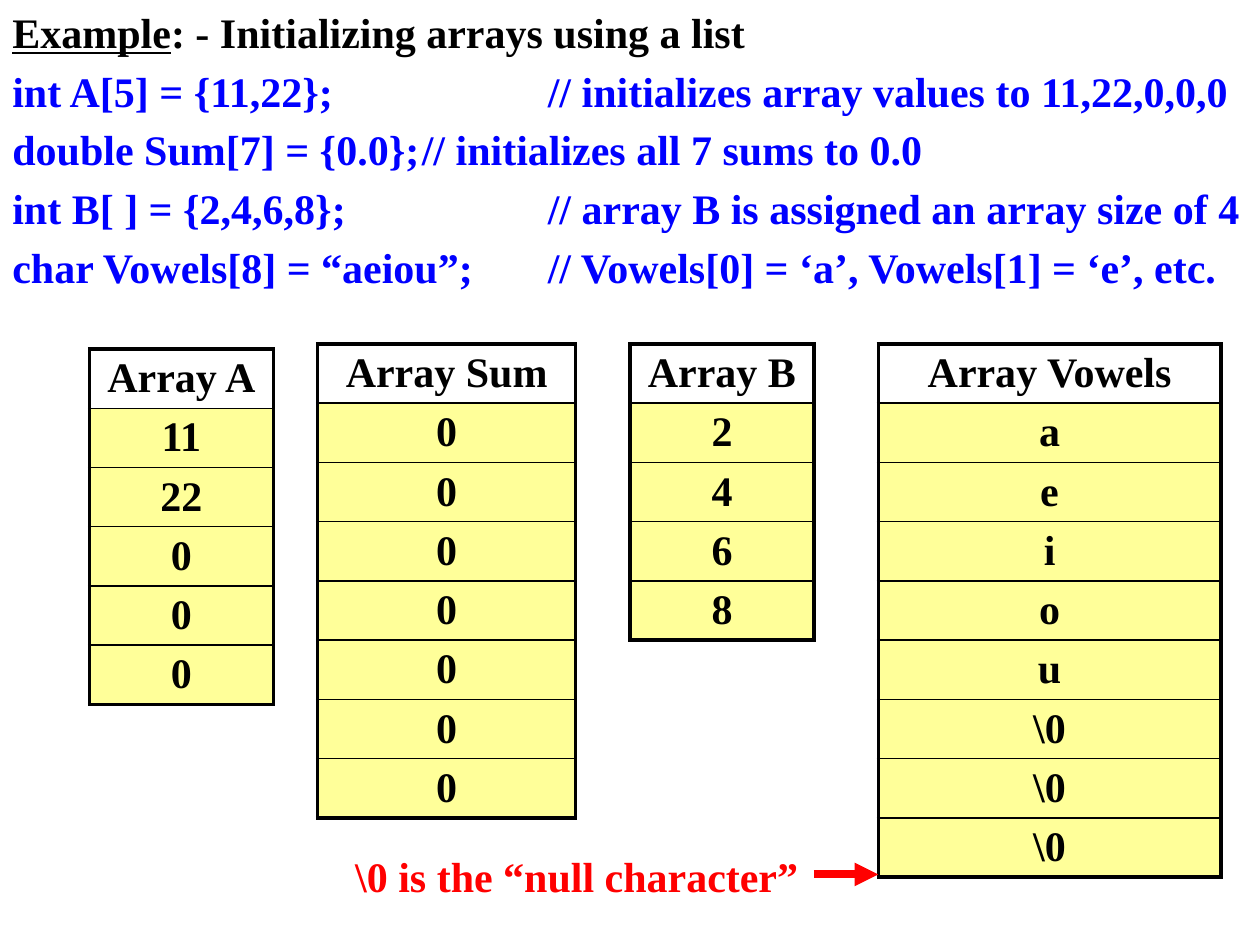
from lxml import etree
from pptx import Presentation
from pptx.dml.color import RGBColor
from pptx.enum.shapes import MSO_CONNECTOR
from pptx.enum.text import MSO_AUTO_SIZE, PP_ALIGN
from pptx.oxml.ns import qn
from pptx.util import Inches, Pt

CENTER = PP_ALIGN.CENTER
BLACK = RGBColor(0, 0, 0)
BLUE = RGBColor(0, 0, 255)
RED = RGBColor(255, 0, 0)
WHITE = RGBColor(255, 255, 255)
YELLOW = RGBColor(255, 255, 153)
ROW_HEIGHT = 0.4
TAB_STEP = 1
THICK, THIN = 2.25, 1

HEADING = ("Example", ": - Initializing arrays using a list")
CODE_LINES = [
    "int A[5] = {11,22}; \t\t// initializes array values to 11,22,0,0,0",
    "double Sum[7] = {0.0};\t// initializes all 7 sums to 0.0",
    "int B[ ] = {2,4,6,8};\t\t// array B is assigned an array size of 4",
    "char Vowels[8] = “aeiou”;\t// Vowels[0] = ‘a’, Vowels[1] = ‘e’, etc.",
]
NULL_NOTE = "\\0 is the “null character”"

# title, left, top, width, values
ARRAYS = [
    ("Array A", 0.71, 2.77, 1.46, ["11", "22", "0", "0", "0"]),
    ("Array Sum", 2.52, 2.73, 2.05, ["0"] * 7),
    ("Array B", 5, 2.73, 1.46, ["2", "4", "6", "8"]),
    ("Array Vowels", 6.97, 2.73, 2.72, list("aeiou") + ["\\0"] * 3),
]


def format_paragraph(para, color, hanging=0):
    """Bold 24 pt serif text, 20% space before, optional hanging indent."""
    properties = para._p.get_or_add_pPr()
    spacing = etree.SubElement(properties, qn("a:spcBef"))
    etree.SubElement(spacing, qn("a:spcPct"), val="20000")
    if hanging:
        properties.set("marL", str(Inches(hanging)))
        properties.set("indent", str(-Inches(hanging)))
        properties.set("defTabSz", str(Inches(TAB_STEP)))
    for span in para.runs:
        span.font.name = "Times New Roman"
        span.font.size = Pt(24)
        span.font.bold = True
        span.font.color.rgb = color


def add_borders(cell, top, bottom):
    properties = cell._tc.get_or_add_tcPr()
    for side, width in (("L", THICK), ("R", THICK), ("T", top), ("B", bottom)):
        line = etree.SubElement(properties, qn(f"a:ln{side}"), w=str(Pt(width)))
        fill = etree.SubElement(line, qn("a:solidFill"))
        etree.SubElement(fill, qn("a:srgbClr"), val=str(BLACK))


def add_code(page):
    box = page.shapes.add_textbox(0, 0, Inches(10), Inches(2.48))
    frame = box.text_frame
    frame.word_wrap = True
    heading = frame.paragraphs[0]
    for text in HEADING:
        heading.add_run().text = text
    heading.runs[0].font.underline = True
    format_paragraph(heading, BLACK, 0.25)
    for text in CODE_LINES:
        para = frame.add_paragraph()
        para.text = text
        format_paragraph(para, BLUE, 0.25)


def add_array(page, title, left, top, width, values):
    texts = [title] + values
    last = len(values)
    table = page.shapes.add_table(
        len(texts), 1, Inches(left), Inches(top), Inches(width),
        Inches(ROW_HEIGHT * len(texts))).table
    table.first_row = table.horz_banding = False
    for index, text in enumerate(texts):
        table.rows[index].height = Inches(ROW_HEIGHT)
        cell = table.cell(index, 0)
        add_borders(cell, THIN if index else THICK,
                    THICK if index == last else THIN)
        cell.margin_bottom = Inches(0.02)
        cell.fill.solid()
        cell.fill.fore_color.rgb = YELLOW if index else WHITE
        cell.text = text
        para = cell.text_frame.paragraphs[0]
        para.alignment = CENTER
        format_paragraph(para, BLACK)


def add_null_note(page):
    box = page.shapes.add_textbox(Inches(2.72), Inches(6.78), Inches(3.72), Inches(0.42))
    frame = box.text_frame
    frame.word_wrap = False
    frame.auto_size = MSO_AUTO_SIZE.SHAPE_TO_FIT_TEXT
    para = frame.paragraphs[0]
    para.text = NULL_NOTE
    para.line_spacing = 0.8
    format_paragraph(para, RED, 0.38)

    arrow = page.shapes.add_connector(
        MSO_CONNECTOR.STRAIGHT, Inches(6.46), Inches(6.94), Inches(6.97), Inches(6.94))
    arrow.line.color.rgb = RED
    arrow.line.width = Pt(4.5)
    etree.SubElement(arrow.line._get_or_add_ln(), qn("a:tailEnd"), type="triangle")
    etree.SubElement(arrow._element.spPr, qn("a:effectLst"))


def main():
    deck = Presentation()
    deck.slide_width, deck.slide_height = Inches(10), Inches(7.5)
    page = deck.slides.add_slide(deck.slide_layouts[6])
    add_code(page)
    for array in ARRAYS:
        add_array(page, *array)
    add_null_note(page)
    deck.save("out.pptx")


if __name__ == "__main__":
    main()
